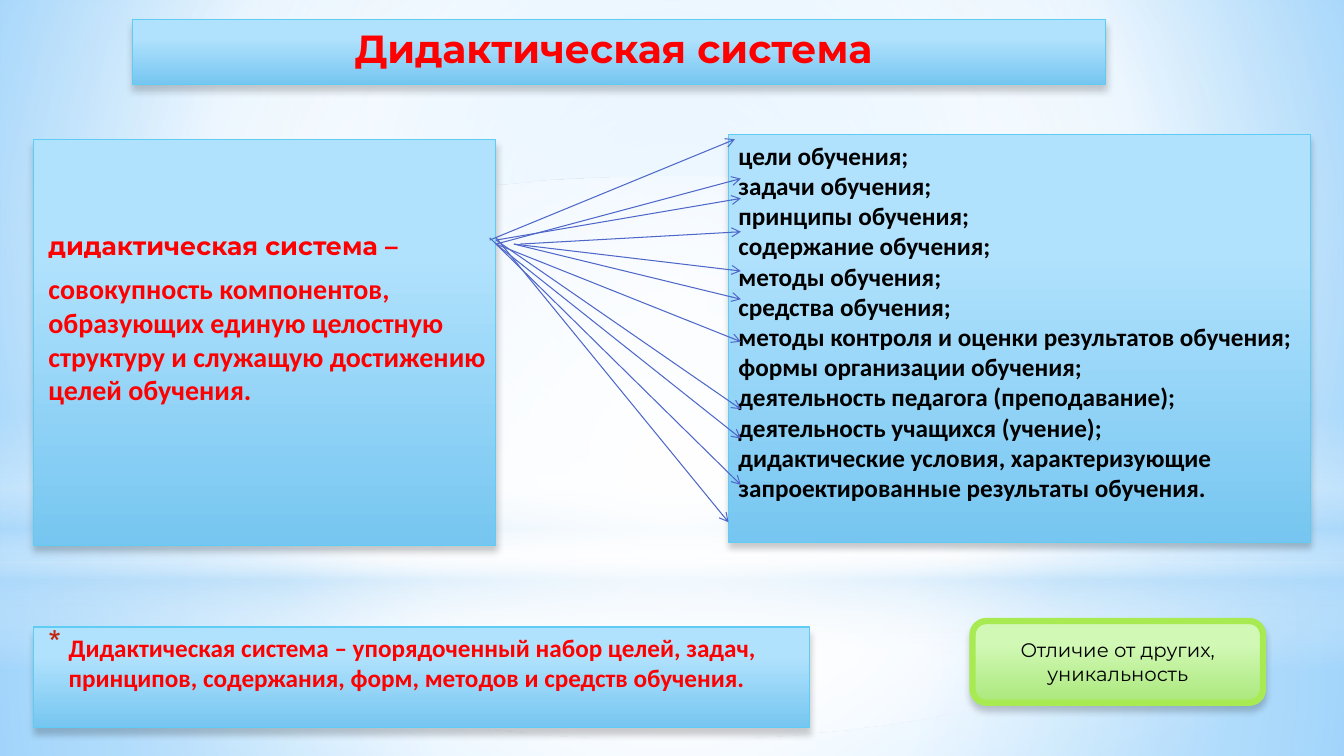
"""Build the slide about the components of a didactic system."""
from lxml import etree
from pptx import Presentation
from pptx.dml.color import RGBColor
from pptx.enum import shapes, text
from pptx.oxml import ns
from pptx.util import Cm, Pt

RED = RGBColor(0xFF, 0x00, 0x00)
BLACK = RGBColor(0x00, 0x00, 0x00)
WHITE = RGBColor(0xFF, 0xFF, 0xFF)
MIST = RGBColor(0xB4, 0xDC, 0xFA)
CYAN = RGBColor(0x5E, 0xCC, 0xF3)
LIME = RGBColor(0xA7, 0xEA, 0x52)
INDIGO = RGBColor(0x4E, 0x67, 0xC8)
BRICK = RGBColor(0xC3, 0x26, 0x0C)

SLIDE_SIZE = (33.87, 19.05)
DOWN = None
CENTRE = (50, 50, 50, 50)
BACKDROP = [(0, RGBColor(0x9E, 0xD5, 0xFF), 100), (60, WHITE, 100),
            (100, RGBColor(0x5B, 0xB9, 0xFF), 100)]
BACKDROP_FOCUS = (20, 10, 20, 60)
BLUE_PANEL = [(28, RGBColor(0xB1, 0xE2, 0xFD), 100), (100, RGBColor(0x76, 0xC6, 0xF1), 100)]
GREEN_PANEL = [(28, RGBColor(0xD1, 0xF8, 0xB5), 100), (100, RGBColor(0xAA, 0xE8, 0x7B), 100)]

RECT = shapes.MSO_SHAPE.RECTANGLE
ROUNDED = shapes.MSO_SHAPE.ROUNDED_RECTANGLE
GLOWS = [
    (RECT, (0, 14.17, 33.87, 4.88), CENTRE, [(0, WHITE, 91), (37, WHITE, 76), (100, MIST, 79)]),
    (RECT, (0, 0, 33.87, 14.17), CENTRE, [(0, WHITE, 89), (48, WHITE, 62), (100, MIST, 79)]),
    (RECT, (0, 10.46, 33.87, 6.35), DOWN,
     [(0, WHITE, 0), (29, WHITE, 30), (45, MIST, 40), (55, WHITE, 26), (65, MIST, 60), (100, WHITE, 0)]),
    (shapes.MSO_SHAPE.OVAL, (0, 4.45, 33.87, 14.17), CENTRE, [(0, WHITE, 100), (56, WHITE, 0)]),
]

TITLE = "Дидактическая система "
TITLE_BOX = (3.33, 0.48, 24.54, 1.65)
TERM = "дидактическая система –"
MEANING = ("совокупность компонентов, образующих единую целостную структуру "
           "и служащую достижению целей обучения.")
DEFINITION_BOX = (0.84, 3.51, 11.66, 10.24)
SUMMARY = ("Дидактическая система – упорядоченный набор целей, задач, принципов, "
           "содержания, форм, методов и средств обучения. ")
SUMMARY_BOX = (0.84, 15.8, 19.56, 2.54)
COMPONENTS = [
    "цели обучения;",
    "задачи обучения;",
    "принципы обучения;",
    "содержание обучения;",
    "методы обучения;",
    "средства обучения;",
    "методы контроля и оценки результатов обучения;",
    "формы организации обучения;",
    "деятельность педагога (преподавание);",
    "деятельность учащихся (учение);",
    "дидактические условия, характеризующие запроектированные результаты обучения.",
]
COMPONENTS_BOX = (18.36, 3.4, 14.66, 10.26)
UNIQUENESS = "Отличие от других, уникальность"
UNIQUENESS_BOX = (24.51, 15.65, 7.32, 2.06)
ARROWS = [
    (12.34, 6.05, 18.52, 3.51), (12.5, 6.15, 18.67, 4.5), (12.5, 6.05, 18.67, 5),
    (13.11, 6.15, 18.67, 5.84), (12.95, 6.15, 18.67, 6.83), (12.95, 6.15, 18.67, 7.54),
    (12.5, 6.15, 18.67, 8.61), (12.5, 6.05, 18.67, 10.31), (12.5, 6.15, 18.67, 11.05),
    (12.34, 5.99, 18.67, 12.22), (12.5, 5.99, 18.36, 13.16),
]


def add(parent, tag, **attributes):
    child = etree.SubElement(parent, ns.qn(tag))
    for key, value in attributes.items():
        child.set(key, str(value))
    return child


def paint(fill, holder, stops, focus=DOWN):
    fill.solid()
    solid = next(holder.iter(ns.qn("a:solidFill")))
    gradient = etree.Element(ns.qn("a:gradFill"), rotWithShape="1")
    stop_list = add(gradient, "a:gsLst")
    for position, color, opacity in stops:
        stop = add(stop_list, "a:gs", pos=position * 1000)
        add(add(stop, "a:srgbClr", val=color), "a:alpha", val=opacity * 1000)
    if focus is DOWN:
        add(gradient, "a:lin", ang=5400000, scaled=0)
    else:
        sides = {side: value * 1000 for side, value in zip("ltrb", focus)}
        add(add(gradient, "a:path", path="circle"), "a:fillToRect", **sides)
    solid.getparent().replace(solid, gradient)


def style_panel(panel, stops=BLUE_PANEL, border=CYAN, width=0.75, anchor=text.MSO_ANCHOR.TOP):
    paint(panel.fill, panel.element.spPr, stops)
    panel.line.color.rgb = border
    panel.line.width = Pt(width)
    panel.shadow.inherit = False
    effects = panel.element.spPr.find(ns.qn("a:effectLst"))
    shadow = add(effects, "a:outerShdw", blurRad=Pt(5), dist=Pt(4), dir=5400000, rotWithShape=0)
    add(add(shadow, "a:srgbClr", val=BLACK), "a:alpha", val=20000)
    panel.text_frame.word_wrap = True
    panel.text_frame.auto_size = text.MSO_AUTO_SIZE.NONE
    panel.text_frame.vertical_anchor = anchor


def write(paragraph, words, size, font, color=RED, bold=True, align=text.PP_ALIGN.LEFT):
    paragraph.alignment = align
    run = paragraph.add_run()
    run.text = words
    run.font.size = Pt(size)
    run.font.name = font
    run.font.bold = bold
    run.font.color.rgb = color


def indent(paragraph, left, first=0):
    properties = paragraph._p.get_or_add_pPr()
    properties.set("marL", str(Cm(left)))
    properties.set("indent", str(Cm(first)))
    return properties


def main():
    deck = Presentation()
    deck.slide_width, deck.slide_height = map(Cm, SLIDE_SIZE)
    slide = deck.slides.add_slide(deck.slide_layouts[5])
    paint(slide.background.fill, slide.element, BACKDROP, BACKDROP_FOCUS)

    for outline, box, focus, stops in GLOWS:
        glow = slide.shapes.add_shape(outline, *map(Cm, box))
        paint(glow.fill, glow.element.spPr, stops, focus)
        glow.line.fill.background()
        glow.shadow.inherit = False

    title = slide.shapes.title
    title.left, title.top, title.width, title.height = map(Cm, TITLE_BOX)
    slide.shapes.element.append(title.element)
    style_panel(title)
    write(title.text_frame.paragraphs[0], TITLE, 28, "Montserrat", align=text.PP_ALIGN.CENTER)

    definition = slide.shapes.add_shape(RECT, *map(Cm, DEFINITION_BOX))
    style_panel(definition)
    definition.text_frame.margin_top = Cm(2.3)
    term = definition.text_frame.paragraphs[0]
    meaning = definition.text_frame.add_paragraph()
    write(term, TERM, 18, "Montserrat")
    write(meaning, MEANING, 20, "Calibri")
    meaning.space_before = Pt(8)
    for paragraph in (term, meaning):
        indent(paragraph, 0.13)

    summary = slide.shapes.add_shape(RECT, *map(Cm, SUMMARY_BOX))
    style_panel(summary)
    statement = summary.text_frame.paragraphs[0]
    write(statement, SUMMARY, 18, "Calibri")
    bullet = indent(statement, 0.64, -0.51)
    add(add(bullet, "a:buClr"), "a:srgbClr", val=BRICK)
    add(bullet, "a:buSzPct", val=130000)
    add(bullet, "a:buChar", char="*")

    components = slide.shapes.add_shape(RECT, *map(Cm, COMPONENTS_BOX))
    style_panel(components)
    for number, component in enumerate(COMPONENTS):
        frame = components.text_frame
        paragraph = frame.add_paragraph() if number else frame.paragraphs[0]
        write(paragraph, component, 18, "Calibri", BLACK)

    for ends in ARROWS:
        arrow = slide.shapes.add_connector(shapes.MSO_CONNECTOR.STRAIGHT, *map(Cm, ends))
        arrow.line.color.rgb = INDIGO
        arrow.line.width = Pt(0.75)
        add(arrow.line._get_or_add_ln(), "a:tailEnd", type="arrow")
        add(arrow.element.spPr, "a:effectLst")

    uniqueness = slide.shapes.add_shape(ROUNDED, *map(Cm, UNIQUENESS_BOX))
    style_panel(uniqueness, GREEN_PANEL, LIME, 4.5, text.MSO_ANCHOR.MIDDLE)
    write(uniqueness.text_frame.paragraphs[0], UNIQUENESS, 14, "Montserrat", BLACK, False,
          text.PP_ALIGN.CENTER)

    deck.save("out.pptx")


if __name__ == "__main__":
    main()
